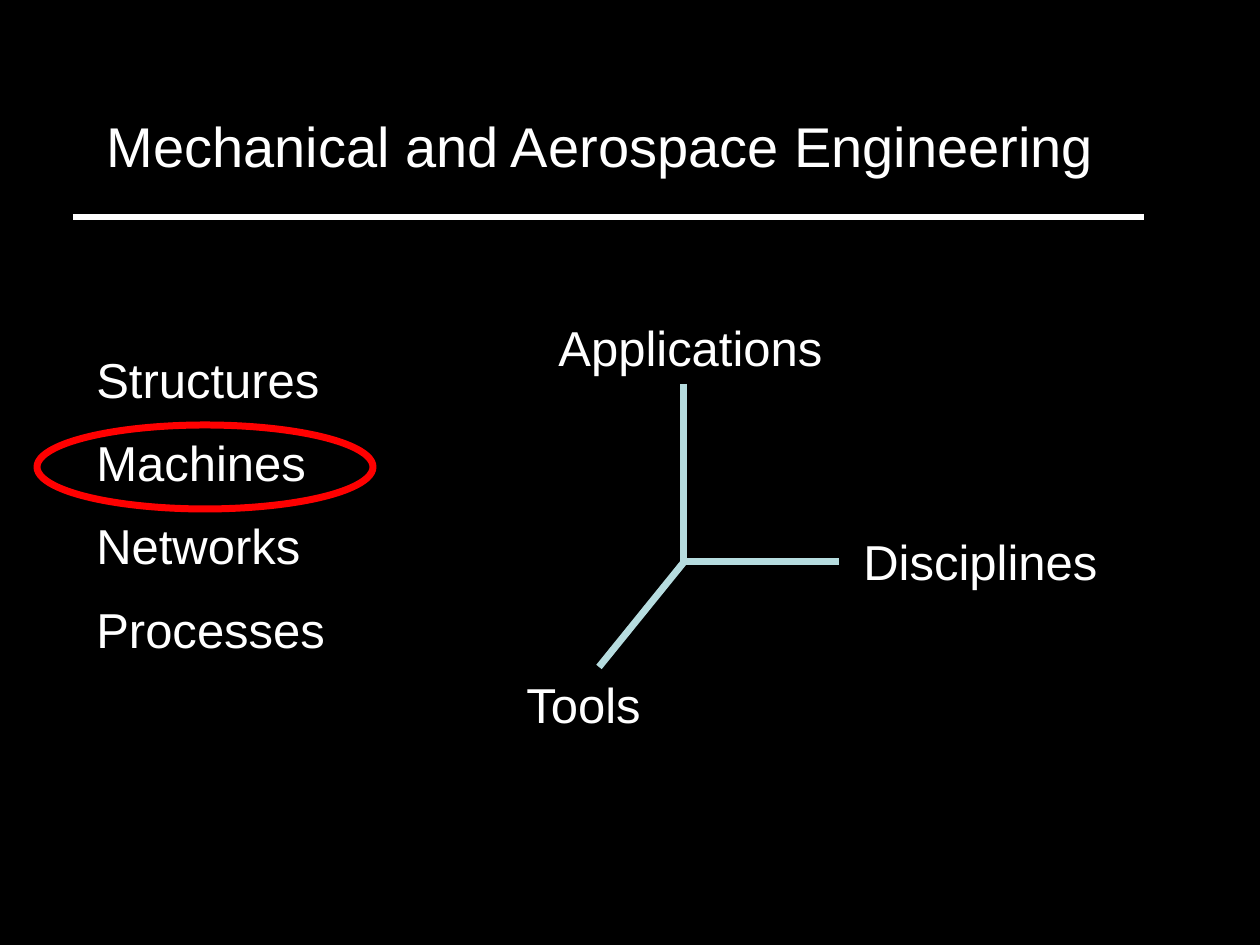
from lxml.etree import SubElement
from pptx import Presentation
from pptx.dml.color import RGBColor as Rgb
from pptx.enum.shapes import MSO_CONNECTOR as Link, MSO_SHAPE as Form
from pptx.oxml.ns import qn
from pptx.util import Pt

HUES = {"back": "000000", "text": "FFFFFF", "axis": "B6DCDF", "ring": "FF0000"}
TITLE = ("Mechanical and Aerospace Engineering", (94, 105, 1081, 79))
TOPICS = (["Structures", "Machines", "Networks", "Processes"], (84, 343, 347, 339))
LABELS = [
    ("Applications", (546, 311, 347, 72)),
    ("Disciplines", (851, 525, 347, 72)),
    ("Tools", (514, 668, 199, 72)),
]
RULE = (73, 217, 1144, 217)
AXES = [(684, 384, 684, 563), (682, 562, 839, 562), (684, 562, 599, 667)]
RING = (37, 425, 336, 84)


def px(n):
    return round(n * 914400 / 126)


def hue(key):
    return Rgb.from_string(HUES[key])


def write(slide, text, box, size=28, font="Arial", color="text", gap=50):
    frame = slide.shapes.add_textbox(*map(px, box)).text_frame
    frame.word_wrap = True
    lines = [text] if isinstance(text, str) else text
    for i, line in enumerate(lines):
        para = frame.add_paragraph() if i else frame.paragraphs[0]
        space = SubElement(para._p.get_or_add_pPr(), qn("a:spcBef"))
        SubElement(space, qn("a:spcPct")).set("val", str(gap * 1000))
        run = para.add_run()
        run.text = line
        run.font.size = Pt(size)
        run.font.name = font
        run.font.color.rgb = hue(color)


def stroke(slide, ends, color, width):
    line = slide.shapes.add_connector(Link.STRAIGHT, *map(px, ends))
    line.line.color.rgb = hue(color)
    line.line.width = Pt(width)
    SubElement(line._element.spPr, qn("a:effectLst"))


def circle(slide, box, color, width):
    ring = slide.shapes.add_shape(Form.OVAL, *map(px, box))
    ring.shadow.inherit = False
    ring.fill.background()
    ring.line.color.rgb = hue(color)
    ring.line.width = Pt(width)


def main():
    deck = Presentation()
    deck.slide_width, deck.slide_height = px(1260), px(945)
    slide = deck.slides.add_slide(deck.slide_layouts[6])
    slide.background.fill.solid()
    slide.background.fill.fore_color.rgb = hue("back")
    write(slide, *TITLE, size=32)
    stroke(slide, RULE, "text", 3)
    for axis in AXES:
        stroke(slide, axis, "axis", 4)
    for text, box in LABELS:
        write(slide, text, box)
    write(slide, *TOPICS)
    circle(slide, RING, "ring", 4)
    deck.save("out.pptx")


if __name__ == "__main__":
    main()
